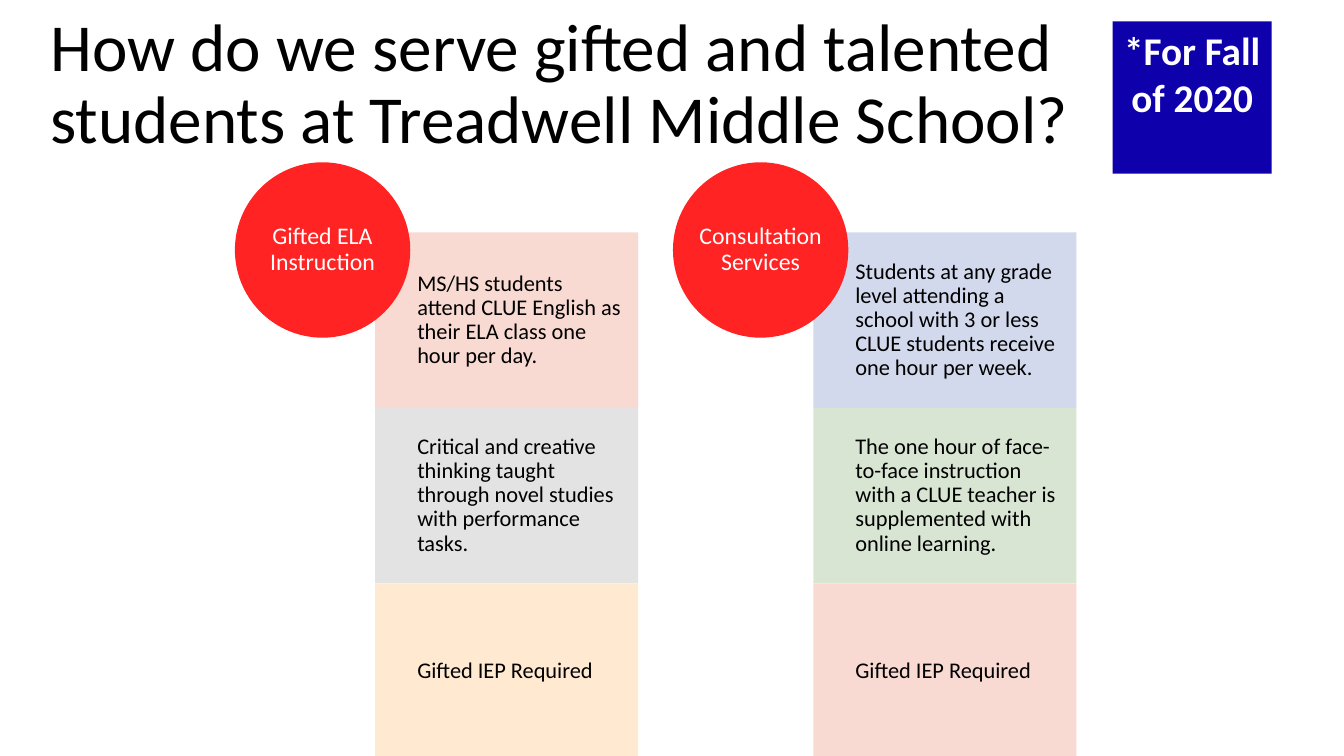
from dataclasses import dataclass

from lxml import etree
from pptx import Presentation
from pptx.dml.color import RGBColor
from pptx.enum import shapes, text
from pptx.oxml import ns
from pptx.util import Cm, Pt

FONT = "Calibri"
BLACK, WHITE, RED, NAVY = "000000", "FFFFFF", "FF2323", "0E00AB"
LEFT, CENTER = text.PP_ALIGN.LEFT, text.PP_ALIGN.CENTER
TOP, MIDDLE = text.MSO_ANCHOR.TOP, text.MSO_ANCHOR.MIDDLE
CIRCLE = 4.42
CIRCLE_LEFT, CIRCLE_TOP = 5.92, 4.09
COLUMN_PITCH = 11.04
CARD_WIDTH = CIRCLE * 1.5


@dataclass
class Card:
    wording: str
    color: str


@dataclass
class Service:
    name: str
    cards: list[Card]


SERVICES = [
    Service("Gifted ELA Instruction", [
        Card("MS/HS students attend CLUE English as their ELA class one hour per day.", "F8D7CE"),
        Card("Critical and creative thinking taught through novel studies with performance tasks.", "E1E1E1"),
        Card("Gifted IEP Required", "FFE8CC"),
    ]),
    Service("Consultation Services", [
        Card("Students at any grade level attending a school with 3 or less CLUE students "
             "receive one hour per week.", "CFD5EA"),
        Card("The one hour of face-to-face instruction with a CLUE teacher is supplemented "
             "with online learning.", "D5E3CF"),
        Card("Gifted IEP Required", "F8D7CE"),
    ]),
]


def rgb(color: str) -> RGBColor:
    return RGBColor.from_string(color)


def write(sp, wording: str, size: float, color: str, align=LEFT, anchor=MIDDLE,
          insets: tuple = (0.25, 0.13, 0.25, 0.13), spacing: float = 0.9, bold: bool = False) -> None:
    tf = sp.text_frame
    tf.word_wrap = True
    tf.auto_size = text.MSO_AUTO_SIZE.NONE
    tf.vertical_anchor = anchor
    tf.margin_left, tf.margin_top, tf.margin_right, tf.margin_bottom = map(Cm, insets)
    p = tf.paragraphs[0]
    p.alignment = align
    p.line_spacing = spacing
    r = p.add_run()
    r.text = wording
    r.font.name = FONT
    r.font.size = Pt(size)
    r.font.bold = bold
    r.font.color.rgb = rgb(color)


def add_block(s, kind, left: float, top: float, width: float, height: float,
              color: str, opacity: int = 100):
    sp = s.shapes.add_shape(kind, Cm(left), Cm(top), Cm(width), Cm(height))
    sp.shadow.inherit = False
    sp.fill.solid()
    sp.fill.fore_color.rgb = rgb(color)
    sp.line.fill.background()
    if opacity < 100:
        clr = sp.fill._xPr.find(ns.qn("a:solidFill"))[0]
        etree.SubElement(clr, ns.qn("a:alpha"), val=str(opacity * 1000))
    return sp


def add_service(s, service: Service, left: float) -> None:
    card_left = left + CIRCLE * 0.8
    card_top = CIRCLE_TOP + CIRCLE * 0.4
    for row, card in enumerate(service.cards):
        sp = add_block(s, shapes.MSO_SHAPE.RECTANGLE, card_left, card_top + row * CIRCLE,
                       CARD_WIDTH, CIRCLE, card.color, 90)
        write(sp, card.wording, 16, BLACK, insets=(CARD_WIDTH * 0.16, 0.3, 0.3, 0.3))
    sp = add_block(s, shapes.MSO_SHAPE.OVAL, left, CIRCLE_TOP, CIRCLE, CIRCLE, RED)
    write(sp, service.name, 17, WHITE, CENTER, insets=(0, 0, 0, 0))


def main() -> None:
    prs = Presentation()
    prs.slide_width, prs.slide_height = Cm(33.87), Cm(19.05)
    s = prs.slides.add_slide(prs.slide_layouts[5])

    title = s.shapes.title
    title.left, title.top, title.width, title.height = Cm(1.02), Cm(0), Cm(26.92), Cm(4.32)
    write(title, "How do we serve gifted and talented students at Treadwell Middle School?", 48, BLACK)

    for column, service in enumerate(SERVICES):
        add_service(s, service, CIRCLE_LEFT + column * COLUMN_PITCH)

    badge = add_block(s, shapes.MSO_SHAPE.RECTANGLE, 28.04, 0.54, 4.01, 3.84, NAVY)
    write(badge, "*For Fall of 2020", 28, WHITE, CENTER, TOP, spacing=1.0, bold=True)

    prs.save("out.pptx")


if __name__ == "__main__":
    main()
